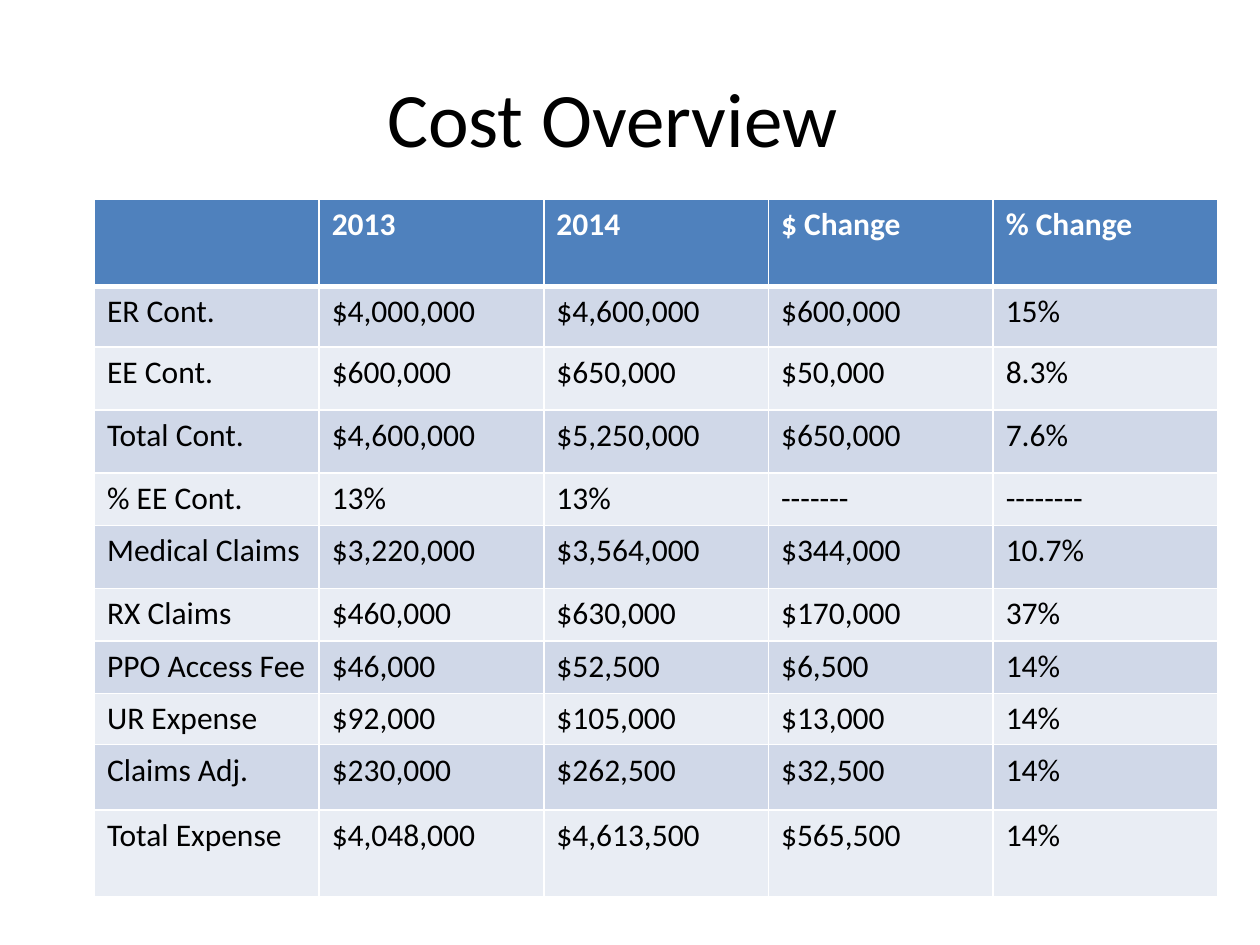
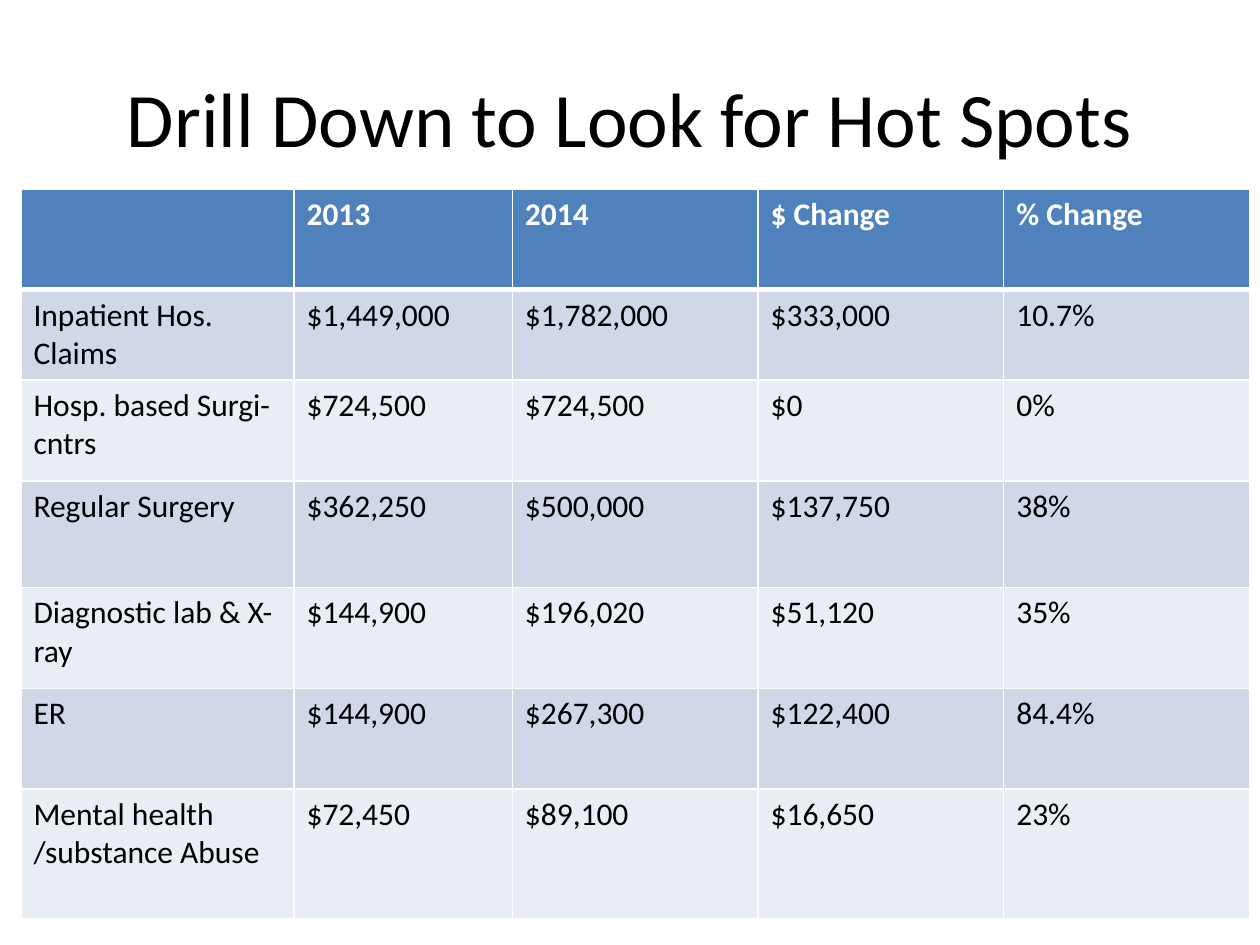
from dataclasses import dataclass

from lxml import etree
from pptx import Presentation
from pptx import util as u
from pptx.dml import color
from pptx.enum import text
from pptx.oxml import ns

Pt = u.Pt


@dataclass(frozen=True)
class Theme:
    font: str = "Calibri"
    title_size: float = 44
    table_size: float = 18
    ink: str = "000000"
    paper: str = "FFFFFF"
    header: str = "4F81BD"
    bands: tuple = ("D0D8E8", "E9EDF4")
    rule: float = 1
    header_rule: float = 3


def apply_format(target, values):
    for name, value in values.items():
        setattr(target, name, value)


class Deck:
    """Holds the theme and the slide being built."""

    def __init__(self, theme):
        self.theme = theme
        self.presentation = Presentation()
        apply_format(self.presentation, {"slide_width": Pt(720), "slide_height": Pt(540)})
        self.slide = None

    def style_font(self, font, size, rgb, bold=False):
        apply_format(font, {"name": self.theme.font, "size": Pt(size), "bold": bold})
        font.color.rgb = color.RGBColor.from_string(rgb)

    def add_slide(self, title, right_inset=7.2):
        layout = self.presentation.slide_layouts.get_by_name("Title Only")
        self.slide = self.presentation.slides.add_slide(layout)
        shape = self.slide.shapes.title
        apply_format(shape, {"left": Pt(36), "top": Pt(21.6), "width": Pt(648), "height": Pt(90)})
        apply_format(shape.text_frame, {
            "text": title,
            "word_wrap": True,
            "auto_size": text.MSO_AUTO_SIZE.NONE,
            "vertical_anchor": text.MSO_ANCHOR.MIDDLE,
            "margin_right": Pt(right_inset),
        })
        paragraph = shape.text_frame.paragraphs[0]
        paragraph.alignment = text.PP_ALIGN.CENTER
        self.style_font(paragraph.runs[0].font, self.theme.title_size, self.theme.ink)

    def add_borders(self, cell, widths):
        properties = cell._tc.get_or_add_tcPr()
        for side, width in widths.items():
            line = etree.SubElement(properties, ns.qn(f"a:ln{side}"), w=str(Pt(width)))
            fill = etree.SubElement(line, ns.qn("a:solidFill"))
            etree.SubElement(fill, ns.qn("a:srgbClr"), val=self.theme.paper)

    def fill_cell(self, cell, value, row):
        theme = self.theme
        is_header = row == 0
        self.add_borders(cell, {
            "L": theme.rule,
            "R": theme.rule,
            "T": theme.header_rule if row == 1 else theme.rule,
            "B": theme.header_rule if is_header else theme.rule,
        })
        cell.fill.solid()
        fill = theme.header if is_header else theme.bands[(row - 1) % 2]
        cell.fill.fore_color.rgb = color.RGBColor.from_string(fill)
        cell.text = value
        self.style_font(cell.text_frame.paragraphs[0].font, theme.table_size,
                        theme.paper if is_header else theme.ink, is_header)

    def add_table(self, left, top, widths, heights, rows):
        shape = self.slide.shapes.add_table(
            len(rows), len(widths), Pt(left), Pt(top), Pt(sum(widths)), Pt(sum(heights)))
        table = shape.table
        table.horz_banding = False
        for column, width in zip(table.columns, widths):
            column.width = Pt(width)
        for row, height in zip(table.rows, heights):
            row.height = Pt(height)
        for index, values in enumerate(rows):
            for column, value in enumerate(values):
                self.fill_cell(table.cell(index, column), value, index)


HEADINGS = ("", "2013", "2014", "$ Change", "% Change")

COSTS = [
    HEADINGS,
    ("ER Cont.", "$4,000,000", "$4,600,000", "$600,000", "15%"),
    ("EE Cont.", "$600,000", "$650,000", "$50,000", "8.3%"),
    ("Total Cont.", "$4,600,000", "$5,250,000", "$650,000", "7.6%"),
    ("% EE Cont.", "13%", "13%", "-------", "--------"),
    ("Medical Claims", "$3,220,000", "$3,564,000", "$344,000", "10.7%"),
    ("RX Claims", "$460,000", "$630,000", "$170,000", "37%"),
    ("PPO Access Fee", "$46,000", "$52,500", "$6,500", "14%"),
    ("UR Expense", "$92,000", "$105,000", "$13,000", "14%"),
    ("Claims Adj.", "$230,000", "$262,500", "$32,500", "14%"),
    ("Total Expense", "$4,048,000", "$4,613,500", "$565,500", "14%"),
]

HOT_SPOTS = [
    HEADINGS,
    ("Inpatient Hos. Claims", "$1,449,000", "$1,782,000", "$333,000", "10.7%"),
    ("Hosp. based Surgi-cntrs", "$724,500", "$724,500", "$0", "0%"),
    ("Regular Surgery", "$362,250", "$500,000", "$137,750", "38%"),
    ("Diagnostic lab & X-ray", "$144,900", "$196,020", "$51,120", "35%"),
    ("ER", "$144,900", "$267,300", "$122,400", "84.4%"),
    ("Mental health /substance Abuse", "$72,450", "$89,100", "$16,650", "23%"),
]


def main():
    deck = Deck(Theme())

    # Yearly cost table, with the title set slightly left of centre
    deck.add_slide("Cost Overview", right_inset=27.2)
    deck.add_table(54, 114, [128.4] * 5,
                   [49.6, 34.8, 36, 36, 30, 36, 30, 30, 29.2, 37.2, 49.6], COSTS)

    # Claims by type of care
    deck.add_slide("Drill Down to Look for Hot Spots")
    deck.add_table(12, 108, [156, 124.8] + [140.4] * 3,
                   [57.6, 51.6, 57.6, 61, 57.6, 57.6, 74], HOT_SPOTS)

    deck.presentation.save("out.pptx")


if __name__ == "__main__":
    main()
